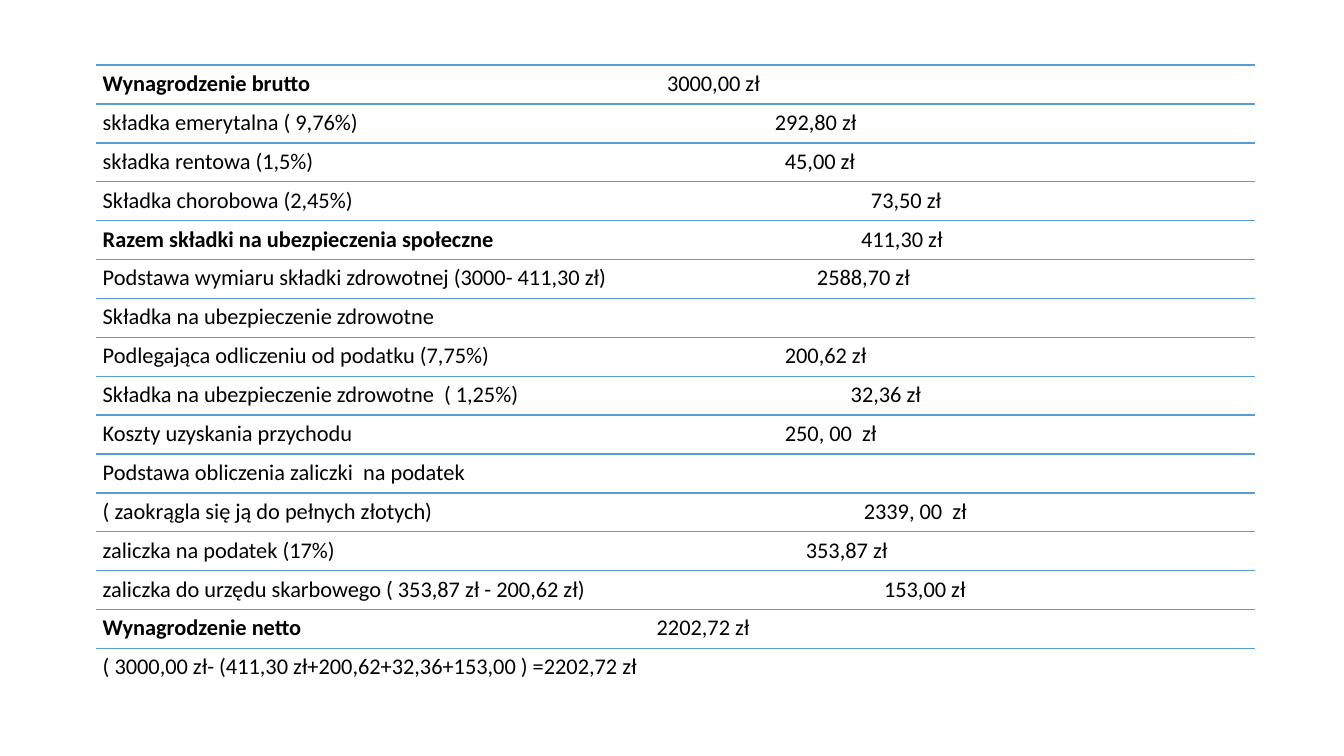
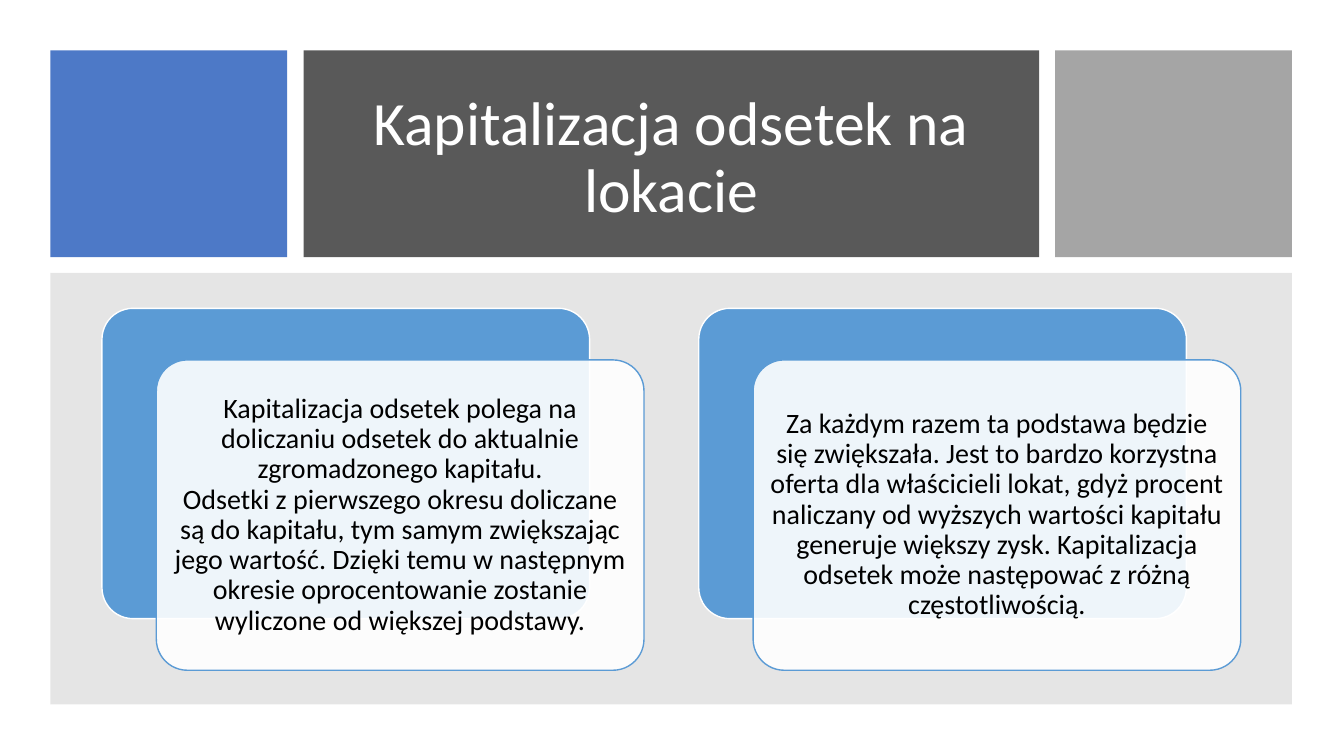
from lxml.etree import SubElement
from pptx import Presentation
from pptx.dml.color import RGBColor
from pptx.enum.shapes import MSO_CONNECTOR, MSO_SHAPE
from pptx.enum.text import MSO_ANCHOR, MSO_AUTO_SIZE, PP_ALIGN
from pptx.oxml.ns import qn
from pptx.util import Cm, Pt

COLORS = {
    "blue": "4472C4", "sky": "5B9BD5", "dark": "595959", "gray": "A5A5A5",
    "mid": "808080", "white": "FFFFFF", "black": "000000",
}

# Label, value, tab stop of the value (cm), bold label
ROWS = [
    ("Wynagrodzenie brutto", "3000,00 zł", 14.22, True),
    ("składka emerytalna ( 9,76%)", "292,80 zł", 16.94, False),
    ("składka rentowa (1,5%)", "45,00 zł", 17.19, False),
    ("Składka chorobowa (2,45%)", "73,50 zł", 19.36, False),
    ("Razem składki na ubezpieczenia społeczne", "411,30 zł", 19.11, True),
    ("Podstawa wymiaru składki zdrowotnej (3000- 411,30 zł)",
     "2588,70 zł", 18, False),
    ("Składka na ubezpieczenie zdrowotne", "", 0, False),
    ("Podlegająca odliczeniu od podatku (7,75%)", "200,62 zł", 17.19, False),
    ("Składka na ubezpieczenie zdrowotne  ( 1,25%)", "32,36 zł", 18.85, False),
    ("Koszty uzyskania przychodu", "250, 00  zł", 17.19, False),
    ("Podstawa obliczenia zaliczki  na podatek", "", 0, False),
    ("( zaokrągla się ją do pełnych złotych)", "2339, 00  zł", 19.18, False),
    ("zaliczka na podatek (17%)", "353,87 zł", 17.72, False),
    ("zaliczka do urzędu skarbowego ( 353,87 zł - 200,62 zł)",
     "153,00 zł", 19.69, False),
    ("Wynagrodzenie netto", "2202,72 zł", 13.96, True),
    ("( 3000,00 zł- (411,30 zł+200,62+32,36+153,00 ) =2202,72 zł", "", 0, False),
]

CARDS = [
    "Kapitalizacja odsetek polega na doliczaniu odsetek do aktualnie "
    "zgromadzonego kapitału.\nOdsetki z pierwszego okresu doliczane są do "
    "kapitału, tym samym zwiększając jego wartość. Dzięki temu w następnym "
    "okresie oprocentowanie zostanie wyliczone od większej podstawy.",
    "Za każdym razem ta podstawa będzie się zwiększała. Jest to bardzo "
    "korzystna oferta dla właścicieli lokat, gdyż procent naliczany od "
    "wyższych wartości kapitału generuje większy zysk. Kapitalizacja odsetek "
    "może następować z różną częstotliwością.",
]


def rgb(name):
    return RGBColor.from_string(COLORS[name])


def apply(item, form):
    for key, value in form.items():
        setattr(item, key, value)


class Deck:
    font = "Calibri"

    def __init__(self):
        self.prs = Presentation()
        apply(self.prs, {"slide_width": Cm(33.87), "slide_height": Cm(19.05)})
        self.slide = None

    def add(self, layout):
        self.slide = self.prs.slides.add_slide(self.prs.slide_layouts[layout])

    def frame(self, shape, inset, anchor):
        frame = shape.text_frame
        form = {"word_wrap": True, "auto_size": MSO_AUTO_SIZE.NONE,
                "vertical_anchor": anchor}
        for side in ("left", "right", "top", "bottom"):
            form["margin_" + side] = Cm(inset)
        apply(frame, form)
        return frame.paragraphs[0]

    def style(self, para, size, color="black", after=0.35,
              align=PP_ALIGN.CENTER):
        apply(para, {"alignment": align, "line_spacing": 0.9,
                     "space_before": Pt(0), "space_after": Pt(size * after)})
        for run in para.runs:
            apply(run.font, {"name": self.font, "size": Pt(size)})
            run.font.color.rgb = rgb(color)

    def title(self, text, box):
        shape = self.slide.shapes.title
        apply(shape, dict(zip(("left", "top", "width", "height"), map(Cm, box))))
        para = self.frame(shape, 0.25, MSO_ANCHOR.MIDDLE)
        para.text = text
        self.style(para, 44, "white", after=0)
        # Bring the title in front of its band
        shape.element.getparent().append(shape.element)

    def block(self, box, fill, alpha=100, line=None, kind=MSO_SHAPE.RECTANGLE):
        shape = self.slide.shapes.add_shape(kind, *map(Cm, box))
        shape.shadow.inherit = False
        shape.fill.solid()
        shape.fill.fore_color.rgb = rgb(fill)
        if alpha < 100:
            tint = next(shape.element.spPr.iter(qn("a:srgbClr")))
            SubElement(tint, qn("a:alpha"), val=str(alpha * 1000))
        if line:
            shape.line.color.rgb = rgb(line)
            shape.line.width = Pt(1)
        else:
            shape.line.fill.background()
        return shape

    def card(self, left, top, text):
        size = (12.29, 7.82)
        form = {"kind": MSO_SHAPE.ROUNDED_RECTANGLE}
        back = self.block((left, top, *size), "sky", line="white", **form)
        front = self.block((left + 1.37, top + 1.3, *size), "white", 90,
                           "sky", **form)
        for shape in (back, front):
            shape.adjustments[0] = 0.1
        para = self.frame(front, 0.2, MSO_ANCHOR.MIDDLE)
        para.text = text
        self.style(para, 20)

    def rule(self, left, top, width):
        line = self.slide.shapes.add_connector(
            MSO_CONNECTOR.STRAIGHT, Cm(left), Cm(top), Cm(left + width), Cm(top))
        line.line.color.rgb = rgb("sky")
        line.line.width = Pt(1)
        SubElement(line.element.spPr, qn("a:effectLst"))

    def row(self, box, label, value, stop, bold):
        shape = self.slide.shapes.add_textbox(*map(Cm, box))
        para = self.frame(shape, 0.18, MSO_ANCHOR.TOP)
        run = para.add_run()
        run.text = label
        run.font.bold = bold
        if value:
            para.add_run().text = "\t" + value
        self.style(para, 16, align=PP_ALIGN.LEFT)
        if value:
            tabs = SubElement(para._p.get_or_add_pPr(), qn("a:tabLst"))
            SubElement(tabs, qn("a:tab"), pos=str(Cm(stop)), algn="l")


def main():
    deck = Deck()

    # Payroll breakdown
    deck.add(6)
    left, top, width, step = 2.41, 1.64, 29.21, 0.98
    for i, item in enumerate(ROWS):
        y = top + i * step
        deck.rule(left, y, width)
        deck.row((left, y, width, step), *item)

    # Interest on deposits: header bands
    deck.add(5)
    edge, high = 1.27, 5.21
    deck.block((edge, edge, 5.97, high), "blue", 95)
    deck.block((7.65, edge, 18.54, high), "dark")
    deck.title("Kapitalizacja odsetek na lokacie", (8.46, 2.03, 16.92, 3.96))
    deck.block((26.59, edge, 5.97, high), "gray")

    # Panel with cards
    deck.block((edge, 6.88, 31.29, 10.87), "mid", 20)
    for i, text in enumerate(CARDS):
        deck.card(2.57 + i * 15.04, 7.77, text)

    deck.prs.save("out.pptx")


if __name__ == "__main__":
    main()
